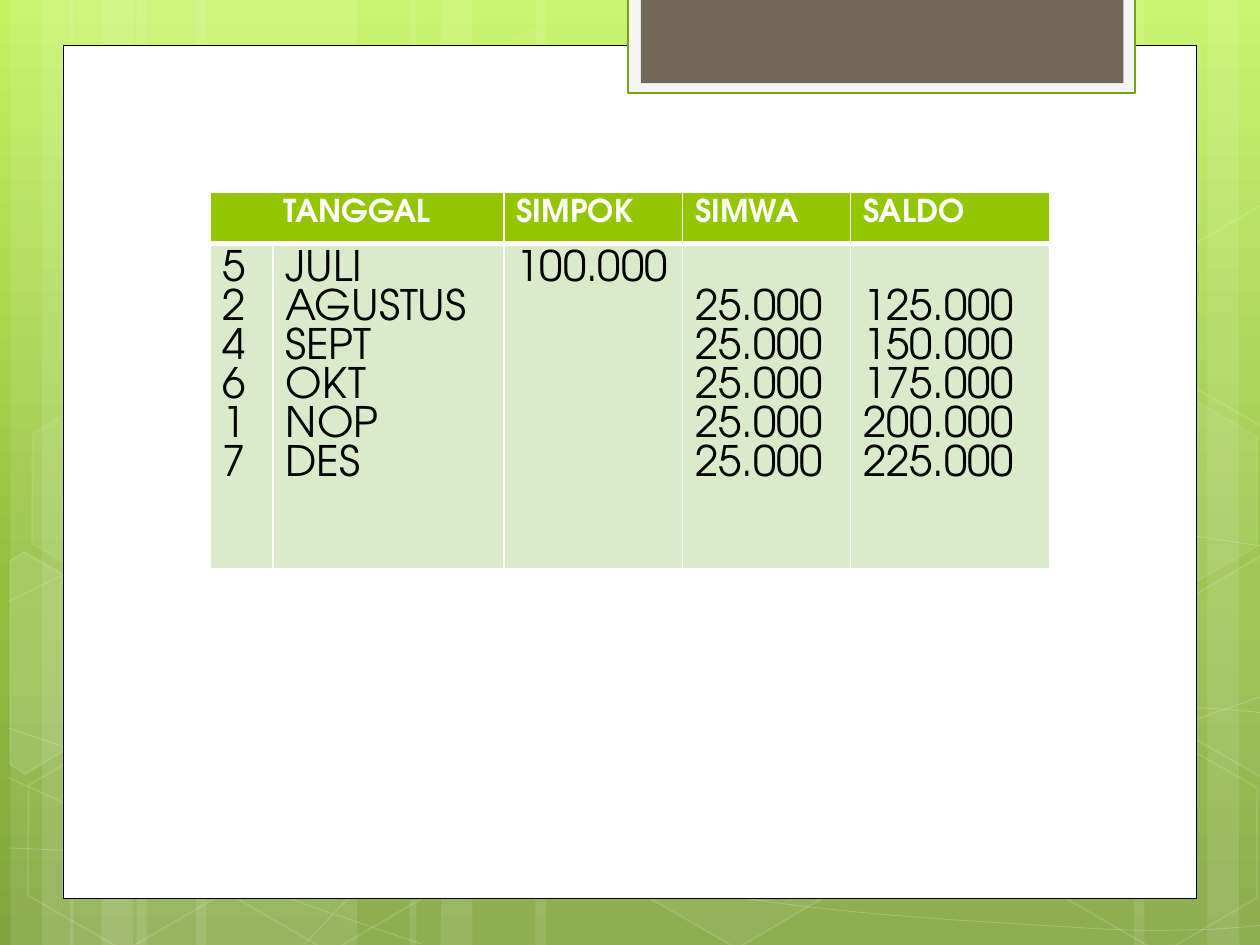
import copy
import math
from dataclasses import dataclass

import lxml.etree
import pptx
import pptx.dml.color
import pptx.enum.shapes
import pptx.enum.text
import pptx.oxml.ns
import pptx.util

Pt = pptx.util.Pt
qn = pptx.oxml.ns.qn
SHAPES = pptx.enum.shapes.MSO_SHAPE
ALIGN = pptx.enum.text.PP_ALIGN


@dataclass(frozen=True)
class Theme:
    font: str = "TeX Gyre Adventor"
    white: str = "FFFFFF"
    black: str = "000000"
    sky: tuple = ((0, "C3F35F"), (0.62, "93BF3F"), (1, "81A53E"))
    tab_rim: str = "F5F5F5"
    tab_line: str = "74A510"
    tab: str = "71685A"
    header: str = "94C600"
    body: str = "DCEACC"
    header_size: float = 18
    body_size: float = 24


@dataclass(frozen=True)
class Box:
    left: float
    top: float
    width: float
    height: float


THEME = Theme()
PAGE = Box(0, 0, 720, 540)
BODY_LINE = 22.3
TILT = 30

BAND_GROUPS = [(6, 126, False), (40, 126, False), (6, 126, True), (234, 222, False)]

CURVES = [
    [(5, 484.6), (136.8, 488.2), (329.8, 478.8), (570.2, 444.2), (725, 396.7)],
    [(5, 343.4), (87.1, 310.3), (249.8, 278.6), (470.9, 278.6), (725, 312.5)],
    [(4.3, 444.2), (131.5, 500.6), (240.5, 539.3)],
    [(5, 416.2), (92.2, 443.5), (257, 484.6), (452.2, 517), (614.2, 529.9),
     (680.4, 531.4), (725, 528.5)],
    [(174.2, 539.3), (217.4, 497.5), (279.4, 460.1), (338.4, 438.5), (437.8, 416.2),
     (489.6, 409.7), (571.7, 404.6), (637.9, 404.6), (686.2, 404.6), (724.3, 407.5)],
]

HEXAGONS = [
    (240.5, 25.9, 4, 8), (357.8, 424.1, 6, 12), (7.9, 425.5, 0, 12),
    (10.1, 224.6, 7, 8), (125.3, 426.2, 0, 12), (542.2, 326.2, 10, 12),
    (600.5, 427, 0, 12), (600.5, 226.1, 7, 8),
]

LEFT_EDGE = [(5.8, 320.4), (13.7, 315.4), (69.1, 347), (68.4, 410.4),
             (14.4, 442.1), (5.8, 437)]
RIGHT_EDGE = [(666.7, 349.2), (720.7, 317.5), (726.5, 321.1), (726.5, 441.4),
              (721.4, 444.2), (666.7, 412.6)]
UPPER_RIGHT_EDGE = [(x, y - 200.5) for x, y in RIGHT_EDGE]
CUT_HEXAGONS = [
    (LEFT_EDGE, (25.9, 385.2), 10),
    (RIGHT_EDGE, (709.2, 374.4), 4),
    (UPPER_RIGHT_EDGE, (709.2, 173.5), 0),
]

COLUMN_WIDTHS = [36, 132, 102, 96, 114]
ROW_HEIGHTS = [29.2, 185.6]
HEADINGS = [(0, "TANGGAL"), (2, "SIMPOK"), (3, "SIMWA"), (4, "SALDO")]
ENTRIES = [
    (0, ["5", "2", "4", "6", "1", "7"]),
    (0, ["JULI", "AGUSTUS", "SEPT", "OKT", "NOP", "DES"]),
    (0, ["100.000"]),
    (1, ["25.000"] * 5),
    (1, ["125.000", "150.000", "175.000", "200.000", "225.000"]),
]


def rgb(colour):
    return pptx.dml.color.RGBColor.from_string(colour)


def apply(target, values):
    for name, value in values.items():
        setattr(target, name, value)


def paint(fill, colour, opacity=100):
    if not opacity:
        fill.background()
        return
    fill.solid()
    fill.fore_color.rgb = rgb(colour)


def style(shape, fill, opacity=100, line=None, width=1, line_opacity=100):
    shape.shadow.inherit = False
    paint(shape.fill, fill, opacity)
    if line:
        paint(shape.line.fill, line)
        shape.line.width = Pt(width)
    else:
        shape.line.fill.background()
    properties = shape._element.spPr
    for holder, value in ((properties, opacity), (properties.find(qn("a:ln")), line_opacity)):
        colour = holder.find(qn("a:solidFill") + "/" + qn("a:srgbClr"))
        if colour is not None and value < 100:
            lxml.etree.SubElement(colour, qn("a:alpha"), val=str(value * 1000))


def add_preset(page, kind, box, **look):
    shape = page.shapes.add_shape(kind, Pt(box.left), Pt(box.top), Pt(box.width), Pt(box.height))
    style(shape, **look)
    return shape


def add_outline(page, box, points, closed, **look):
    corners = [(Pt(box.left + x), Pt(box.top + y)) for x, y in points]
    builder = page.shapes.build_freeform(*corners[0])
    builder.add_line_segments(corners[1:], close=closed)
    shape = builder.convert_to_shape()
    style(shape, **look)
    return shape


def add_curve(page, box, knots, **look):
    padded = [knots[0], *knots, knots[-1]]
    points = [knots[0]]
    for before, start, end, after in zip(padded, padded[1:], padded[2:], padded[3:]):
        points.append(tuple(s + (e - b) / 6 for b, s, e in zip(before, start, end)))
        points.append(tuple(e - (a - s) / 6 for s, e, a in zip(start, end, after)))
        points.append(end)
    shape = add_outline(page, box, points, False, **look)
    lines = list(shape._element.iter(qn("a:lnTo")))
    for first in range(0, len(lines), 3):
        curve = lxml.etree.Element(qn("a:cubicBezTo"))
        lines[first].addprevious(curve)
        for line in lines[first:first + 3]:
            curve.append(line[0])
            line.getparent().remove(line)


def turn_back(points, centre):
    cosine, sine = math.cos(math.radians(TILT)), math.sin(math.radians(TILT))
    offsets = [(x - centre[0], y - centre[1]) for x, y in points]
    return [(centre[0] + x * cosine + y * sine, centre[1] - x * sine + y * cosine)
            for x, y in offsets]


def paint_background(page):
    fill = page.background.fill
    fill.gradient()
    fill.gradient_angle = 270
    stops = page._element.find(".//" + qn("a:gsLst"))
    stops.append(copy.deepcopy(stops[-1]))
    for stop, (position, colour) in zip(fill.gradient_stops, THEME.sky):
        stop.position = position
        stop.color.rgb = rgb(colour)


def add_scenery(page, box):
    for start, wide, mirrored in BAND_GROUPS:
        for offset, width in ((72, wide), (0, 36), (18, 60)):
            left = start + offset
            if mirrored:
                left = box.width + 12 - left - width
            band = Box(box.left + left, box.top, width, box.height)
            add_preset(page, SHAPES.RECTANGLE, band, fill=THEME.white, opacity=10)
    for knots in CURVES:
        add_curve(page, box, knots, fill=THEME.white, opacity=0,
                  line=THEME.white, width=0.5, line_opacity=20)
    for left, top, opacity, line_opacity in HEXAGONS:
        place = Box(box.left + left, box.top + top, 126, 109.4)
        hexagon = add_preset(page, SHAPES.HEXAGON, place, fill=THEME.white, opacity=opacity,
                             line=THEME.white, line_opacity=line_opacity)
        hexagon.rotation = TILT
        hexagon.adjustments[0] = 0.285
    for points, centre, opacity in CUT_HEXAGONS:
        piece = add_outline(page, box, turn_back(points, centre), True, fill=THEME.white,
                            opacity=opacity, line=THEME.white, line_opacity=12)
        piece.rotation = TILT


def add_panel(page, box):
    add_preset(page, SHAPES.RECTANGLE, box, fill=THEME.white, line=THEME.black, width=0.5)
    rim = Box(box.left + 323.1, box.top - 27.4, 289.6, 54.7)
    add_preset(page, SHAPES.RECTANGLE, rim, fill=THEME.tab_rim, line=THEME.tab_line, width=1.25)
    tab = Box(rim.left + 7.1, rim.top, rim.width - 13.8, rim.height - 5.8)
    add_preset(page, SHAPES.RECTANGLE, tab, fill=THEME.tab)


def set_borders(cell, bottom, top):
    properties = cell._tc.get_or_add_tcPr()
    for index, (side, width) in enumerate((("L", 1), ("R", 1), ("T", top), ("B", bottom))):
        line = lxml.etree.Element(qn("a:ln" + side), w=str(Pt(width)))
        fill = lxml.etree.SubElement(line, qn("a:solidFill"))
        lxml.etree.SubElement(fill, qn("a:srgbClr"), val=THEME.white)
        properties.insert(index, line)


def write_cell(cell, lines, align, colour, size, bold):
    for index, text in enumerate(lines):
        para = cell.text_frame.add_paragraph() if index else cell.text_frame.paragraphs[0]
        para.alignment = align
        span = para.add_run()
        span.text = text
        apply(span.font, {"name": THEME.font, "size": Pt(size), "bold": bold})
        span.font.color.rgb = rgb(colour)


def add_savings_table(page, box):
    frame = page.shapes.add_table(2, len(COLUMN_WIDTHS), Pt(box.left), Pt(box.top),
                                  Pt(box.width), Pt(box.height))
    table = frame.table
    for column, width in zip(table.columns, COLUMN_WIDTHS):
        column.width = Pt(width)
    for row, height, colour, borders in zip(
            table.rows, ROW_HEIGHTS, (THEME.header, THEME.body), ((3, 1), (1, 3))):
        row.height = Pt(height)
        for cell in row.cells:
            paint(cell.fill, colour)
            set_borders(cell, *borders)
    table.cell(0, 0).merge(table.cell(0, 1))
    for column, text in HEADINGS:
        write_cell(table.cell(0, column), [text], ALIGN.LEFT if column else ALIGN.CENTER,
                   THEME.white, THEME.header_size, True)
    for column, (skipped, lines) in enumerate(ENTRIES):
        cell = table.cell(1, column)
        cell.margin_top = Pt(3.6 + skipped * BODY_LINE)
        write_cell(cell, lines, ALIGN.LEFT, THEME.black, THEME.body_size, False)


def main():
    deck = pptx.Presentation()
    apply(deck, {"slide_width": Pt(PAGE.width), "slide_height": Pt(PAGE.height)})
    page = deck.slides.add_slide(deck.slide_layouts[6])
    paint_background(page)
    add_scenery(page, PAGE)
    add_panel(page, Box(36, 26, 648, 487.2))
    add_savings_table(page, Box(120, 110, sum(COLUMN_WIDTHS), sum(ROW_HEIGHTS)))
    deck.save("out.pptx")


if __name__ == "__main__":
    main()
